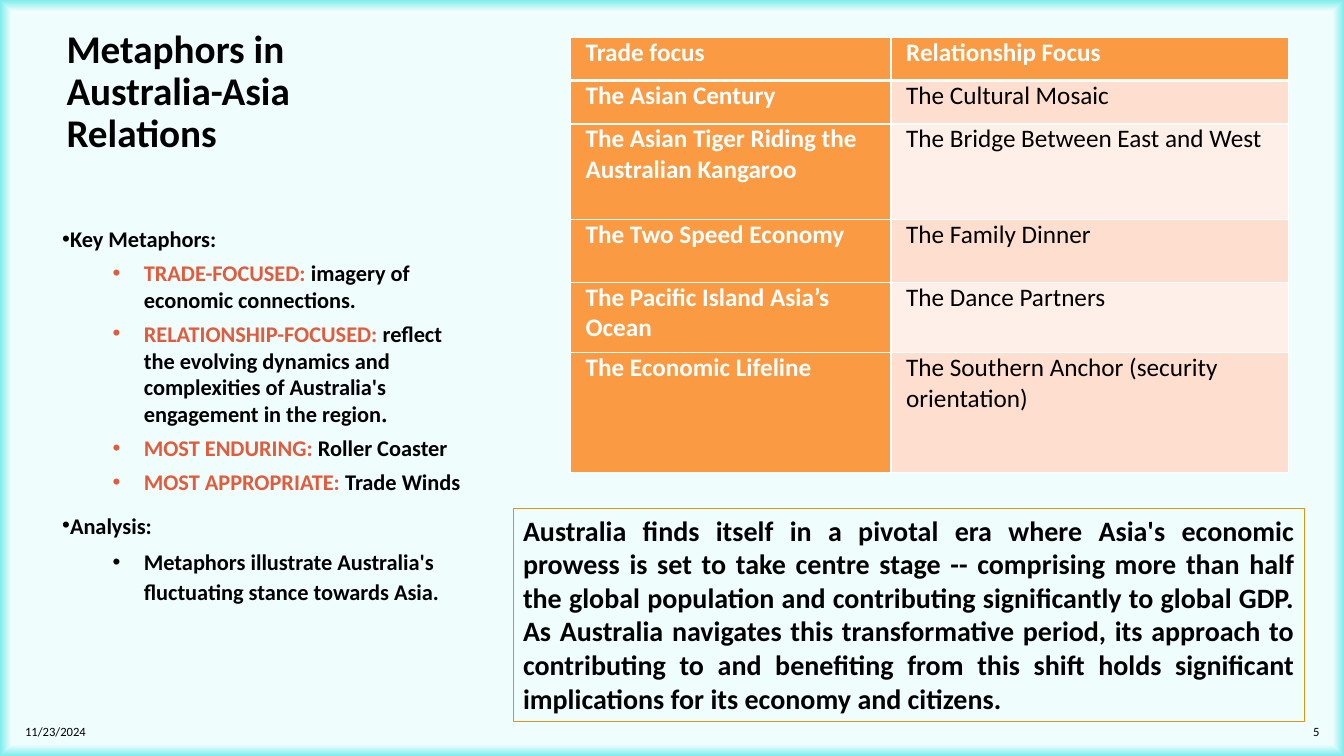
from lxml.etree import SubElement
from pptx import Presentation
from pptx.dml.color import RGBColor
from pptx.enum.shapes import MSO_SHAPE as Preset
from pptx.enum.text import MSO_ANCHOR as Anchor, MSO_AUTO_SIZE as AutoSize, PP_ALIGN as Align
from pptx.oxml import parse_xml
from pptx.oxml.ns import nsdecls, qn
from pptx.util import Pt

BLACK, WHITE, ORANGE, RED, GOLD = "000000", "FFFFFF", "FA9A42", "E15C3D", "DE9415"
BANDS = ("FDDECF", "FEEFE9")

HEADING = {"line_spacing": 1.1, "space_before": Pt(10)}
POINT = {"level": 1, "space_before": Pt(5)}
LAST_POINT = {**POINT, "line_spacing": 1.1}
METAPHORS = [
    (HEADING, [("Key Metaphors:", BLACK)]),
    (POINT, [("TRADE-FOCUSED: ", RED), ("imagery of economic connections.", BLACK)]),
    (POINT, [("RELATIONSHIP-FOCUSED: ", RED),
             ("reflect the evolving dynamics and complexities of Australia's "
              "engagement in the region", BLACK),
             (".", BLACK, "Times New Roman")]),
    (POINT, [("MOST ENDURING: ", RED), ("Roller Coaster", BLACK)]),
    (POINT, [("MOST APPROPRIATE: ", RED), ("Trade Winds", BLACK)]),
    (HEADING, [("Analysis:", BLACK)]),
    (LAST_POINT, [("Metaphors illustrate Australia's fluctuating stance towards Asia.", BLACK)]),
]
FOCUS_ROWS = [
    ("Trade focus", "Relationship Focus"),
    ("The Asian Century", "The Cultural Mosaic"),
    ("The Asian Tiger Riding the Australian Kangaroo", "The Bridge Between East and West"),
    ("The Two Speed Economy", "The Family Dinner"),
    ("The Pacific Island Asia’s Ocean", "The Dance Partners"),
    ("The Economic Lifeline", "The Southern Anchor (security orientation)"),
]
COLUMN_WIDTHS = (229, 283.7)
ROW_HEIGHTS = (31, 31, 68.4, 44.6, 50.4, 85.7)
SUMMARY = (
    "Australia finds itself in a pivotal era where Asia's economic prowess is set to take "
    "centre stage -- comprising more than half the global population and contributing "
    "significantly to global GDP. As Australia navigates this transformative period, its "
    "approach to contributing to and benefiting from this shift holds significant "
    "implications for its economy and citizens."
)


def color(value):
    """Turn a hex string into a colour."""
    return RGBColor.from_string(value)


def set_format(target, values):
    """Set each attribute named in the dict."""
    for name, value in values.items():
        setattr(target, name, value)


def points(*lengths):
    """Turn numbers into lengths in points."""
    return [Pt(length) for length in lengths]


def add_run(paragraph, text, size, fill=BLACK, bold=False, font="Calibri"):
    """Add a formatted run to a paragraph."""
    run = paragraph.add_run()
    run.text = text
    set_format(run.font, {"name": font, "size": Pt(size), "bold": bold})
    run.font.color.rgb = color(fill)


def set_background(slide):
    """Give the slide a pale fill with a glowing edge."""
    stops = "".join(
        f'<a:gs pos="{position}"><a:srgbClr val="{value}"/></a:gs>'
        for position, value in ((97000, "F0FDFD"), (100000, "7CEDEB"))
    )
    background = parse_xml(
        f'<p:bg {nsdecls("p", "a")}><p:bgPr><a:gradFill rotWithShape="1">'
        f'<a:gsLst>{stops}</a:gsLst><a:path path="shape">'
        '<a:fillToRect l="50000" t="50000" r="50000" b="50000"/></a:path>'
        "</a:gradFill><a:effectLst/></p:bgPr></p:bg>"
    )
    slide.element.cSld.insert(0, background)


def set_title(slide, text):
    """Place and format the title."""
    title = slide.shapes.title
    left, top, width, height = points(40.3, 17.3, 283, 138.2)
    set_format(title, {"left": left, "top": top, "width": width, "height": height})
    set_format(title.text_frame, {"auto_size": AutoSize.NONE, "vertical_anchor": Anchor.TOP,
                                  "word_wrap": True})
    paragraph = title.text_frame.paragraphs[0]
    set_format(paragraph, {"alignment": Align.LEFT, "line_spacing": 0.9})
    add_run(paragraph, text, 28, bold=True)


def add_bullet(paragraph, indented):
    """Give a paragraph its bullet and indent."""
    properties = paragraph._p.get_or_add_pPr()
    margin, indent = points(58.3, -22.3) if indented else points(0, 0)
    properties.set("marL", str(margin))
    properties.set("indent", str(indent))
    SubElement(properties, qn("a:buFont")).set("typeface", "Arial")
    SubElement(properties, qn("a:buChar")).set("char", "•")


def add_metaphors(slide):
    """Add the bulleted list of metaphors."""
    frame = slide.shapes.add_textbox(*points(37.4, 155.5, 302.4, 352.8)).text_frame
    frame.word_wrap = True
    for index, (values, runs) in enumerate(METAPHORS):
        paragraph = frame.add_paragraph() if index else frame.paragraphs[0]
        set_format(paragraph, values)
        add_bullet(paragraph, paragraph.level == 1)
        for text, fill, *font in runs:
            add_run(paragraph, text, 16, fill, True, *font)


def add_footer(slide, text, left, width, alignment):
    """Add a small text at the foot of the slide."""
    frame = slide.shapes.add_textbox(*points(left, 508.3, width, 28.8)).text_frame
    set_format(frame, {"word_wrap": True, "vertical_anchor": Anchor.MIDDLE})
    frame.paragraphs[0].alignment = alignment
    add_run(frame.paragraphs[0], text, 9)


def add_borders(cell, row):
    """Draw white cell borders, thicker under the header."""
    widths = {"L": 1, "R": 1, "T": 3 if row == 1 else 1, "B": 3 if row == 0 else 1}
    for side, width in widths.items():
        line = SubElement(cell._tc.get_or_add_tcPr(), qn(f"a:ln{side}"), w=str(Pt(width)))
        fill = SubElement(line, qn("a:solidFill"))
        SubElement(fill, qn("a:srgbClr"), val=WHITE)


def fill_cell(cell, text, row, column):
    """Write and colour one table cell."""
    strong = row == 0 or column == 0
    set_format(cell, {"margin_left": Pt(10.8), "margin_right": Pt(10.8),
                      "margin_top": 0, "margin_bottom": 0})
    add_borders(cell, row)
    cell.fill.solid()
    cell.fill.fore_color.rgb = color(ORANGE if strong else BANDS[(row - 1) % 2])
    paragraph = cell.text_frame.paragraphs[0]
    paragraph.alignment = Align.LEFT if row else Align.JUSTIFY
    add_run(paragraph, text, 18, WHITE if strong else BLACK, strong)


def add_focus_table(slide):
    """Add the table of trade and relationship metaphors."""
    area = points(407.5, 26.6, sum(COLUMN_WIDTHS), sum(ROW_HEIGHTS))
    table = slide.shapes.add_table(len(ROW_HEIGHTS), len(COLUMN_WIDTHS), *area).table
    for column, width in zip(table.columns, COLUMN_WIDTHS):
        column.width = Pt(width)
    for row, height in zip(table.rows, ROW_HEIGHTS):
        row.height = Pt(height)
    for row, texts in enumerate(FOCUS_ROWS):
        for column, text in enumerate(texts):
            fill_cell(table.cell(row, column), text, row, column)


def add_summary(slide):
    """Add the outlined summary box."""
    shape = slide.shapes.add_shape(Preset.RECTANGLE, *points(366.5, 362.9, 565.2, 152.6))
    shape.shadow.inherit = False
    shape.fill.background()
    shape.line.color.rgb = color(GOLD)
    shape.line.width = Pt(0.75)
    set_format(shape.text_frame, {"word_wrap": True, "vertical_anchor": Anchor.TOP,
                                  "auto_size": AutoSize.SHAPE_TO_FIT_TEXT})
    paragraph = shape.text_frame.paragraphs[0]
    paragraph.alignment = Align.JUSTIFY
    add_run(paragraph, SUMMARY, 20, bold=True)


def main():
    """Build the slide and save it."""
    presentation = Presentation()
    set_format(presentation, {"slide_width": Pt(960), "slide_height": Pt(540)})
    slide = presentation.slides.add_slide(presentation.slide_layouts[5])
    set_background(slide)
    set_title(slide, "Metaphors in Australia-Asia Relations")
    add_metaphors(slide)
    add_footer(slide, "11/23/2024", 10.8, 275, Align.LEFT)
    add_footer(slide, "5", 915.8, 33.8, Align.RIGHT)
    add_focus_table(slide)
    add_summary(slide)
    presentation.save("out.pptx")


if __name__ == "__main__":
    main()
